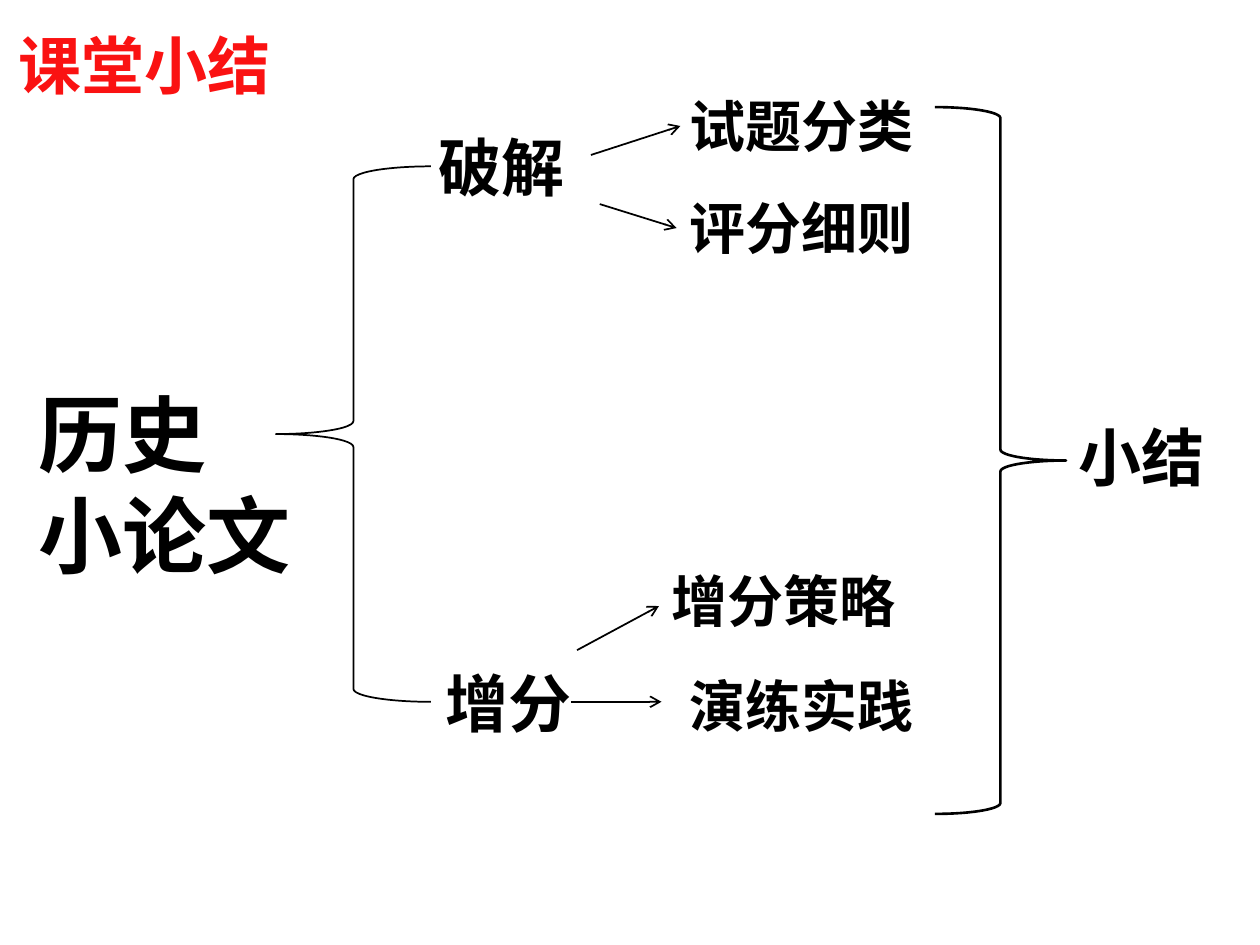
from lxml import etree
from pptx import Presentation
from pptx.dml.color import RGBColor
from pptx.enum import shapes, text
from pptx.oxml.ns import qn
from pptx.util import Inches, Pt

BLACK = "000000"
SANS = "Noto Sans CJK SC"


def color(code):
    return RGBColor.from_string(code)


def write(box, words, at, size=36, font=SANS, ink=BLACK):
    """Place a box and fill it with bold, left-aligned lines."""
    box.left, box.top, box.width, box.height = [Inches(n) for n in at]
    frame = box.text_frame
    frame.text = words
    frame.word_wrap = True
    frame.auto_size = text.MSO_AUTO_SIZE.NONE
    frame.vertical_anchor = text.MSO_ANCHOR.TOP
    frame.margin_left = frame.margin_right = Inches(0.1)
    frame.margin_top = frame.margin_bottom = Inches(0.04)
    for para in frame.paragraphs:
        para.alignment = text.PP_ALIGN.LEFT
        para.line_spacing = Pt(round(size * 1.21))
        for run in para.runs:
            run.font.size = Pt(size)
            run.font.bold = True
            run.font.name = font
            run.font.color.rgb = color(ink)
            east = etree.SubElement(run.font._element, qn("a:ea"))
            east.set("typeface", SANS)


deck = Presentation()
deck.slide_width, deck.slide_height = Inches(10), Inches(7.5)
slide = deck.slides.add_slide(deck.slide_layouts[5])
items = slide.shapes

# Title
write(items.title, "课堂小结", (0.05, 0.16, 9.9, 1.61), font="Arial", ink="FA1212")

# Topic, branches, leaves and closing word
labels = [
    ("历史\n小论文", (0.21, 2.99, 2.29, 1.72), 48, "Arial"),
    ("破解", (3.38, 0.97, 1.48, 0.7), 36, SANS),
    ("增分", (3.44, 5.22, 1.58, 0.7), 36, SANS),
    ("试题分类", (5.37, 0.68, 3.31, 0.63), 32, SANS),
    ("评分细则", (5.37, 1.49, 3.31, 0.63), 32, SANS),
    ("增分策略", (5.23, 4.45, 3.31, 0.63), 32, SANS),
    ("演练实践", (5.37, 5.28, 3.31, 0.63), 32, SANS),
    ("小结", (8.46, 3.27, 1.48, 0.7), 36, SANS),
]
for words, at, size, font in labels:
    write(items.add_textbox(0, 0, 0, 0), words, at, size=size, font=font)

# Braces
braces = [
    (shapes.MSO_SHAPE.LEFT_BRACE, (2.19, 1.32, 1.23, 4.25), 1),
    (shapes.MSO_SHAPE.RIGHT_BRACE, (7.42, 0.85, 1.04, 5.61), 1.5),
]
for kind, at, width in braces:
    brace = items.add_shape(kind, *[Inches(n) for n in at])
    brace.shadow.inherit = False
    brace.fill.background()
    brace.line.color.rgb = color(BLACK)
    brace.line.width = Pt(width)

# Arrows from branches to leaves
arrows = [
    (4.69, 1.23, 5.4, 1),
    (4.76, 1.62, 5.37, 1.81),
    (4.58, 5.16, 5.23, 4.81),
    (4.53, 5.57, 5.25, 5.57),
]
for ends in arrows:
    arrow = items.add_connector(
        shapes.MSO_CONNECTOR.STRAIGHT, *[Inches(n) for n in ends])
    arrow.line.color.rgb = color(BLACK)
    arrow.line.width = Pt(1)
    etree.SubElement(arrow.line._get_or_add_ln(), qn("a:tailEnd")).set("type", "arrow")
    etree.SubElement(arrow._element.spPr, qn("a:effectLst"))

deck.save("out.pptx")
